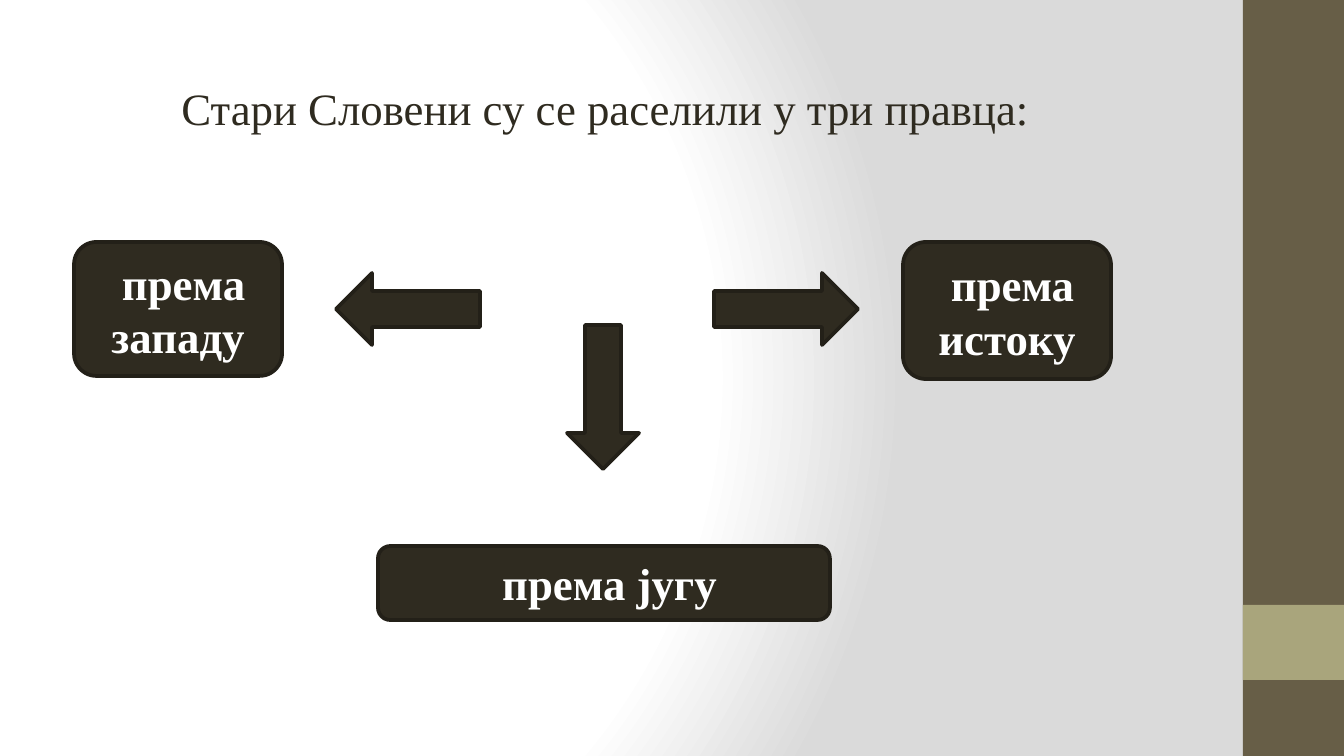
"""Build the slide on the three directions in which the Old Slavs moved."""
from pptx import Presentation
from pptx.dml.color import RGBColor
from pptx.enum.shapes import MSO_SHAPE
from pptx.enum.text import MSO_ANCHOR, PP_ALIGN
from pptx.oxml import parse_xml
from pptx.oxml.ns import nsdecls, qn
from pptx.util import Emu, Pt

PX = 9144000 / 1344
DARK = RGBColor(0x2F, 0x2B, 0x20)
EDGE = RGBColor(0x23, 0x20, 0x18)
BROWN = RGBColor(0x67, 0x5E, 0x47)
OLIVE = RGBColor(0xA9, 0xA5, 0x7C)
WHITE = RGBColor(0xFF, 0xFF, 0xFF)


def write(frame, text, color=WHITE, bold=True, align=PP_ALIGN.CENTER, anchor=MSO_ANCHOR.MIDDLE):
    frame.word_wrap = True
    frame.vertical_anchor = anchor
    para = frame.paragraphs[0]
    para.alignment = align
    run = para.add_run()
    run.text = text
    run.font.name = "Times New Roman"
    run.font.size = Pt(24)
    run.font.bold = bold
    run.font.color.rgb = color


def draw(kind, box, fill, edge=None):
    shape = slide.shapes.add_shape(kind, *[Emu(round(n * PX)) for n in box])
    shape.shadow.inherit = False
    shape.fill.solid()
    shape.fill.fore_color.rgb = fill
    if edge is None:
        shape.line.fill.background()
    else:
        shape.line.color.rgb = edge
        shape.line.width = Pt(2)
    return shape


deck = Presentation()
deck.slide_width = Emu(round(1344 * PX))
deck.slide_height = Emu(round(756 * PX))
slide = deck.slides.add_slide(deck.slide_layouts[5])

slide.background.fill.gradient()
grad = slide.element.find(".//" + qn("a:gradFill"))
stops = "".join(
    f'<a:gs pos="{pos * 1000}"><a:srgbClr val="{tint}"/></a:gs>'
    for pos, tint in [(0, "FFFFFF"), (75, "FFFFFF"), (100, "DADADA")]
)
glow = parse_xml(
    f'<a:gradFill {nsdecls("a")} rotWithShape="1"><a:gsLst>{stops}</a:gsLst>'
    '<a:path path="circle"><a:fillToRect l="20000" t="50000" r="100000" b="50000"/></a:path>'
    "</a:gradFill>"
)
grad.getparent().replace(grad, glow)

draw(MSO_SHAPE.RECTANGLE, (1243, 0, 101, 756), BROWN)
draw(MSO_SHAPE.RECTANGLE, (1243, 605, 101, 75), OLIVE)

title = slide.shapes.title
title.left, title.top, title.width, title.height = [
    Emu(round(n * PX)) for n in (168, 74, 892, 67)
]
write(title.text_frame, "Стари Словени су се раселили у три правца:", color=DARK,
      bold=False, align=PP_ALIGN.LEFT, anchor=MSO_ANCHOR.TOP)

arrows = [
    (MSO_SHAPE.RIGHT_ARROW, (714, 273, 144, 72)),
    (MSO_SHAPE.LEFT_ARROW, (336, 273, 144, 72)),
    (MSO_SHAPE.DOWN_ARROW, (567, 325, 72, 144)),
]
for kind, box in arrows:
    draw(kind, box, DARK, EDGE)

goals = [
    (" према истоку", (903, 242, 208, 137)),
    (" према западу", (74, 242, 208, 134)),
    (" према југу", (378, 546, 452, 74)),
]
for text, box in goals:
    goal = draw(MSO_SHAPE.ROUNDED_RECTANGLE, box, DARK, EDGE)
    write(goal.text_frame, text)

deck.save("out.pptx")
